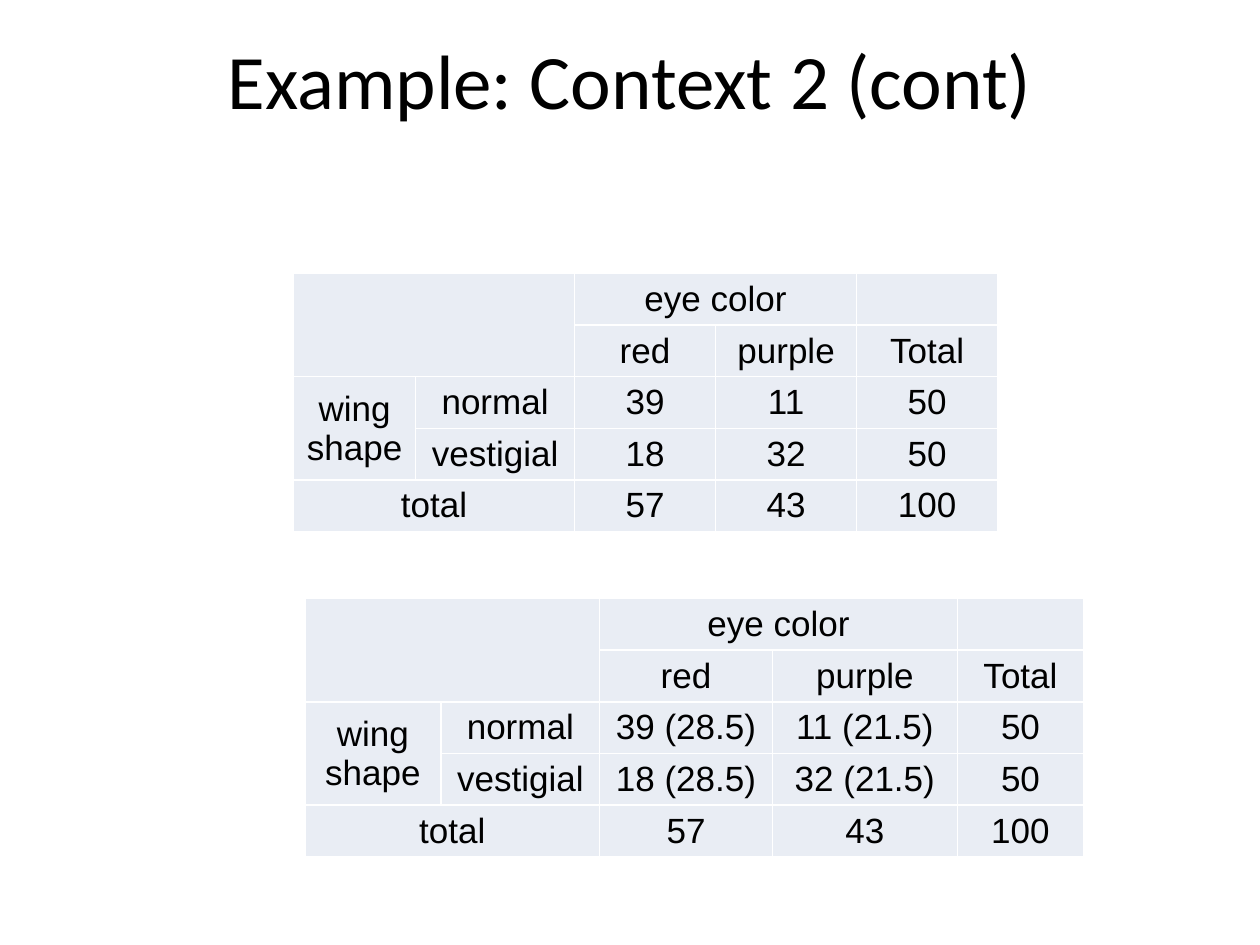
from lxml import etree
from pptx import Presentation
from pptx.dml.color import RGBColor
from pptx.enum.text import MSO_ANCHOR, PP_ALIGN
from pptx.oxml.ns import qn
from pptx.util import Inches, Pt

CENTER = PP_ALIGN.CENTER
MIDDLE = MSO_ANCHOR.MIDDLE
COLORS = {"text": "000000", "cell": "E9EDF4", "border": "FFFFFF"}
TITLE_ONLY_LAYOUT = 5
ROW_HEIGHT = 0.41
MERGES = [((0, 0), (1, 1)), ((0, 2), (0, 3)), ((2, 0), (3, 0)), ((4, 0), (4, 1))]
OBSERVED = [["39", "11"], ["18", "32"]]
WITH_EXPECTED = [["39 (28.5)", "11 (21.5)"], ["18 (28.5)", "32 (21.5)"]]


def format_text(frame, font_name, size):
    """Center the text of a frame and set its font."""
    for para in frame.paragraphs:
        para.alignment = CENTER
        for span in para.runs:
            span.font.name = font_name
            span.font.size = Pt(size)
            span.font.color.rgb = RGBColor.from_string(COLORS["text"])


def add_borders(cell):
    """Draw a thin line on all four sides of a cell."""
    properties = cell._tc.get_or_add_tcPr()
    for position, side in enumerate(("lnL", "lnR", "lnT", "lnB")):
        line = etree.Element(qn(f"a:{side}"), w=str(Pt(1)))
        fill = etree.SubElement(line, qn("a:solidFill"))
        etree.SubElement(fill, qn("a:srgbClr"), val=COLORS["border"])
        properties.insert(position, line)


def format_cell(cell):
    """Give a cell its fill, borders, margins and text style."""
    cell.fill.solid()
    cell.fill.fore_color.rgb = RGBColor.from_string(COLORS["cell"])
    cell.vertical_anchor = MIDDLE
    cell.margin_top = cell.margin_bottom = Inches(0.03)
    add_borders(cell)
    format_text(cell.text_frame, "Arial", 20)


def place_title(slide, left, top, width, height):
    """Place the slide title in its box."""
    title = slide.shapes.title
    title.left, title.top = Inches(left), Inches(top)
    title.width, title.height = Inches(width), Inches(height)
    title.text_frame.text = "Example: Context 2 (cont)"
    title.text_frame.vertical_anchor = MIDDLE
    format_text(title.text_frame, "Calibri", 44)


def place_count_table(slide, left, top, column_widths, counts):
    """Place a wing shape by eye color table with its totals."""
    rows = [
        ["", "", "eye color", "", ""],
        ["", "", "red", "purple", "Total"],
        ["wing shape", "normal", *counts[0], "50"],
        ["", "vestigial", *counts[1], "50"],
        ["total", "", "57", "43", "100"],
    ]
    frame = slide.shapes.add_table(
        len(rows), len(column_widths), Inches(left), Inches(top),
        Inches(sum(column_widths)), Inches(ROW_HEIGHT * len(rows)))
    table = frame.table
    for column, width in zip(table.columns, column_widths):
        column.width = Inches(width)
    for row_index, texts in enumerate(rows):
        table.rows[row_index].height = Inches(ROW_HEIGHT)
        for column_index, text in enumerate(texts):
            cell = table.cell(row_index, column_index)
            cell.text_frame.text = text
            format_cell(cell)
    for first, last in MERGES:
        table.cell(*first).merge(table.cell(*last))


def main():
    """Build the deck and save it."""
    deck = Presentation()
    deck.slide_width, deck.slide_height = Inches(10), Inches(7.5)
    page = deck.slides.add_slide(deck.slide_layouts[TITLE_ONLY_LAYOUT])
    place_title(page, 0.5, 0, 9, 1.25)
    place_count_table(page, 2.33, 2.17, [0.97, 1.26, 1.12, 1.12, 1.12], OBSERVED)
    place_count_table(page, 2.42, 4.75, [1.08, 1.26, 1.37, 1.47, 1], WITH_EXPECTED)
    deck.save("out.pptx")


if __name__ == "__main__":
    main()
